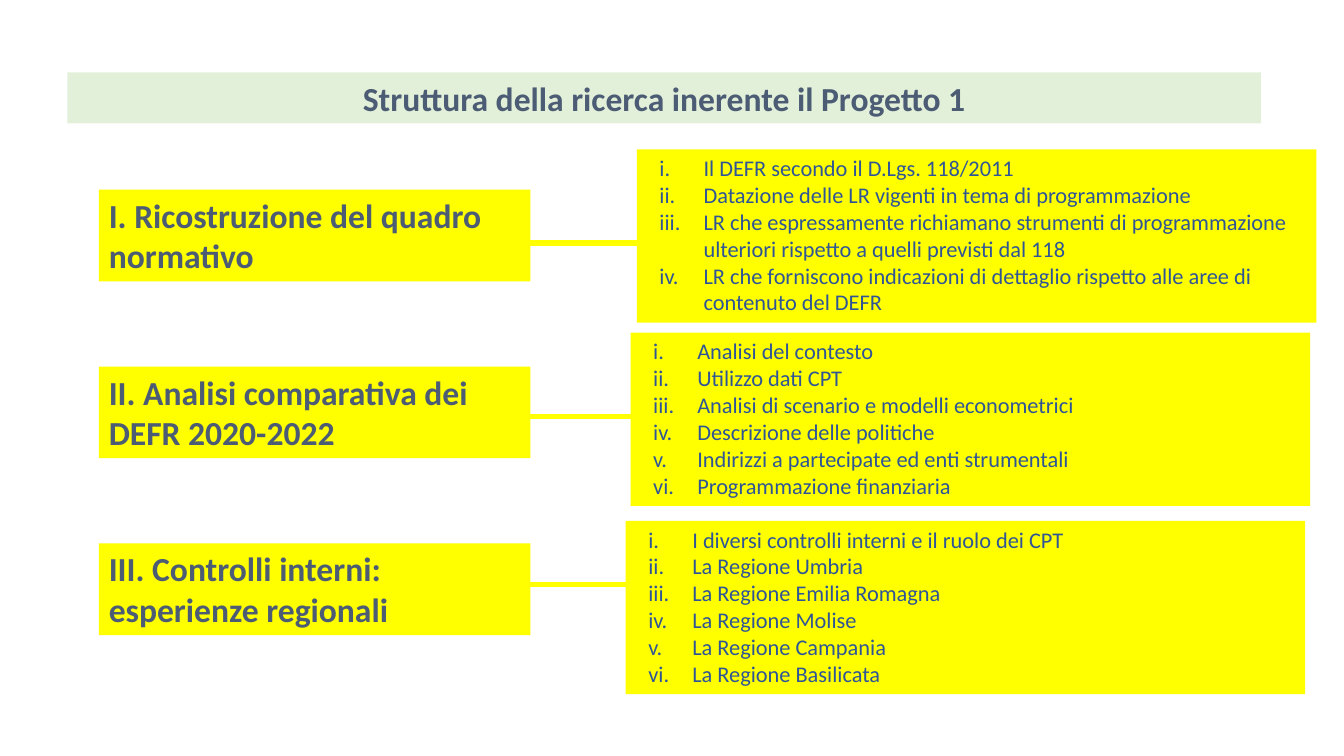
import pptx
import pptx.dml.color
import pptx.enum.shapes
import pptx.enum.text
import pptx.oxml
import pptx.oxml.ns
import pptx.util

Pt = pptx.util.Pt
ALIGN = pptx.enum.text.PP_ALIGN

# Content
TITLE = "Struttura della ricerca inerente il Progetto 1"
# heading, (left, top) of the details, (start, height) of the link, details
SECTIONS = [
    ("I. Ricostruzione del quadro normativo", (455, 106.6), (372.2, 173.5), [
        "Il DEFR secondo il D.Lgs. 118/2011",
        "Datazione delle LR vigenti in tema di programmazione",
        "LR che espressamente richiamano strumenti di programmazione "
        "ulteriori rispetto a quelli previsti dal 118",
        "LR che forniscono indicazioni di dettaglio rispetto alle aree di "
        "contenuto del DEFR",
    ]),
    ("II. Analisi comparativa dei DEFR 2020-2022", (450.5, 237.6), (372.2, 297.4), [
        "Analisi del contesto",
        "Utilizzo dati CPT",
        "Analisi di scenario e modelli econometrici",
        "Descrizione delle politiche",
        "Indirizzi a partecipate ed enti strumentali",
        "Programmazione finanziaria",
    ]),
    ("III. Controlli interni: esperienze regionali", (447, 372), (375, 417.6), [
        "I diversi controlli interni e il ruolo dei CPT",
        "La Regione Umbria",
        "La Regione Emilia Romagna",
        "La Regione Molise",
        "La Regione Campania",
        "La Regione Basilicata",
    ]),
]
COLORS = {"title": "E2F0D9", "box": "FFFF00", "heading": "4B5C74", "detail": "2F5597"}
HEADING_LEFT, HEADING_TOP, HEADING_STEP = 70.6, 135.5, 126.3
HEADING_SIZE, DETAIL_SIZE = (308.2, 65.5), (485.3, 123.8)
LINK_LENGTH = 82.8


def rgb(name):
    return pptx.dml.color.RGBColor.from_string(COLORS[name])


def add_box(pos, size, fill, lines, font_size, color, bold=False,
            align=ALIGN.LEFT, numbered=False):
    s = slide.shapes.add_shape(pptx.enum.shapes.MSO_SHAPE.RECTANGLE,
                               *(Pt(v) for v in (*pos, *size)))
    s.shadow.inherit = False
    s.fill.solid()
    s.fill.fore_color.rgb = rgb(fill)
    s.line.fill.background()
    tf = s.text_frame
    tf.word_wrap = True
    tf.auto_size = pptx.enum.text.MSO_AUTO_SIZE.SHAPE_TO_FIT_TEXT
    tf.vertical_anchor = pptx.enum.text.MSO_ANCHOR.TOP
    for i, line in enumerate(lines):
        p = tf.add_paragraph() if i else tf.paragraphs[0]
        p.alignment = align
        if numbered:
            number(p)
        r = p.add_run()
        r.text = line
        r.font.name = "Calibri"
        r.font.size = Pt(font_size)
        r.font.bold = bold
        r.font.color.rgb = rgb(color)


def number(p):
    """Roman numbering with a hanging indent."""
    p.level = 1
    pPr = p._p.get_or_add_pPr()
    pPr.set("marL", str(Pt(40.5)))
    pPr.set("indent", str(Pt(-31.5)))
    bullet = pptx.oxml.parse_xml(
        f'<a:buAutoNum {pptx.oxml.ns.nsdecls("a")} type="romanLcPeriod"/>')
    pPr.append(bullet)


def add_link(x, y):
    c = slide.shapes.add_connector(pptx.enum.shapes.MSO_CONNECTOR.STRAIGHT,
                                   Pt(x), Pt(y), Pt(x + LINK_LENGTH), Pt(y))
    c.line.color.rgb = rgb("box")
    c.line.width = Pt(4)
    c._element.spPr.append(
        pptx.oxml.parse_xml(f'<a:effectLst {pptx.oxml.ns.nsdecls("a")}/>'))


prs = pptx.Presentation()
prs.slide_width, prs.slide_height = Pt(960), Pt(540)
slide = prs.slides.add_slide(prs.slide_layouts[6])

# Title band
add_box((48.2, 51.8), (852.5, 36.4), "title", [TITLE], 24, "heading",
        bold=True, align=ALIGN.CENTER)

# Sections: heading, numbered details and the link between them
for i, (heading, detail_pos, link_start, details) in enumerate(SECTIONS):
    add_box((HEADING_LEFT, HEADING_TOP + i * HEADING_STEP), HEADING_SIZE,
            "box", [heading], 24, "heading", bold=True)
    add_box(detail_pos, DETAIL_SIZE, "box", details, 16, "detail", numbered=True)
    add_link(*link_start)

prs.save("out.pptx")
